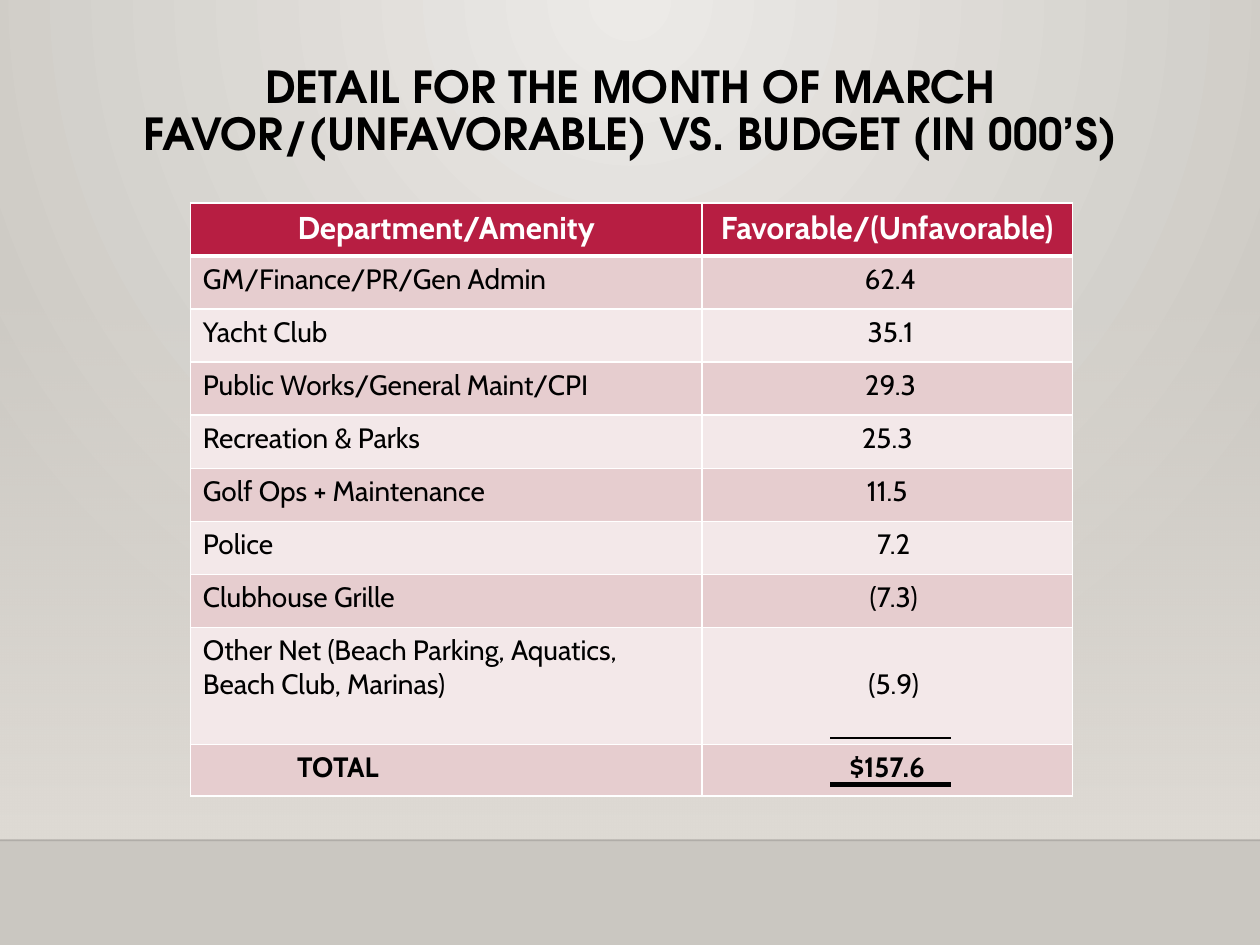
from dataclasses import dataclass

from lxml.etree import SubElement
from pptx import Presentation
from pptx.dml.color import RGBColor
from pptx.enum.shapes import MSO_CONNECTOR, MSO_SHAPE
from pptx.enum.text import MSO_ANCHOR, MSO_AUTO_SIZE, PP_ALIGN
from pptx.oxml.ns import qn
from pptx.slide import Slide
from pptx.table import _Cell
from pptx.util import Cm, Pt

BLACK = RGBColor(0x00, 0x00, 0x00)
WHITE = RGBColor(0xFF, 0xFF, 0xFF)
CRIMSON = RGBColor(0xB7, 0x1E, 0x42)
ROSE = RGBColor(0xE6, 0xCD, 0xCF)
PALE_ROSE = RGBColor(0xF3, 0xE8, 0xE9)
LIGHT_STONE = RGBColor(0xEC, 0xEA, 0xE7)
DARK_STONE = RGBColor(0xCA, 0xC7, 0xC1)
SAND = RGBColor(0xDF, 0xDB, 0xD5)

TITLE_FONT = "TeX Gyre Adventor"
TABLE_FONT = "Cabin"
CELL_MARGIN = 0.25
SLIDE_WIDTH = 25.4
FLOOR_TOP = 16.94


@dataclass(frozen=True)
class BudgetRow:
    department: str
    variance: str
    height: float = 1.07
    department_indent: float = 0
    variance_indent: float = 0
    variance_drop: float = 0
    bold: bool = False


@dataclass(frozen=True)
class Rule:
    left: float
    right: float
    top: float
    weight: float
    opacity: int = 100


ROWS = (
    BudgetRow("GM/Finance/PR/Gen Admin", "62.4", variance_indent=0.13),
    BudgetRow("Yacht Club", "35.1", variance_indent=0.13),
    BudgetRow("Public Works/General Maint/CPI", "29.3", variance_indent=0.13),
    BudgetRow("Recreation & Parks", "25.3"),
    BudgetRow("Golf Ops + Maintenance", "11.5"),
    BudgetRow("Police", "7.2", variance_indent=0.26),
    BudgetRow("Clubhouse Grille", "(7.3)", variance_indent=0.26),
    BudgetRow("Other Net (Beach Parking, Aquatics, Beach Club, Marinas)", "(5.9)",
              height=2.36, variance_indent=0.26, variance_drop=0.68),
    BudgetRow("TOTAL", "$157.6", height=1.04, department_indent=1.9, bold=True),
)
HEADER = BudgetRow("Department/Amenity", "Favorable/(Unfavorable)", bold=True)
FLOOR_EDGE = Rule(0, SLIDE_WIDTH, FLOOR_TOP, 1, opacity=20)
TOTAL_RULES = (Rule(16.74, 19.18, 15.82, 3), Rule(16.74, 19.18, 14.88, 1.25))


def set_opacity(color_element, percent: int) -> None:
    SubElement(color_element, qn("a:alpha")).set("val", str(percent * 1000))


def paint_background(slide: Slide) -> None:
    fill = slide.background.fill
    fill.gradient()
    for stop, color in zip(fill.gradient_stops, (LIGHT_STONE, DARK_STONE)):
        stop.color.rgb = color
    gradient = slide.element.xpath(".//p:bgPr/a:gradFill")[0]
    gradient.remove(gradient.find(qn("a:lin")))
    circle = SubElement(gradient, qn("a:path"), path="circle")
    SubElement(circle, qn("a:fillToRect"), l="43000", t="0", r="43000", b="100000")


def add_wall_shade(slide: Slide) -> None:
    top = 5.59
    shade = slide.shapes.add_shape(
        MSO_SHAPE.RECTANGLE, 0, Cm(top), Cm(SLIDE_WIDTH), Cm(FLOOR_TOP - top))
    shade.shadow.inherit = False
    shade.line.fill.background()
    shade.fill.gradient()
    shade.fill.gradient_angle = 270
    for stop in shade.fill.gradient_stops:
        stop.color.rgb = SAND
    set_opacity(shade.element.xpath(".//a:gs/a:srgbClr")[0], 0)


def add_rule(slide: Slide, rule: Rule) -> None:
    connector = slide.shapes.add_connector(
        MSO_CONNECTOR.STRAIGHT, Cm(rule.left), Cm(rule.top), Cm(rule.right), Cm(rule.top))
    connector.line.color.rgb = BLACK
    connector.line.width = Pt(rule.weight)
    if rule.opacity < 100:
        set_opacity(connector.element.xpath(".//a:ln//a:srgbClr")[0], rule.opacity)
    SubElement(connector.element.spPr, qn("a:effectLst"))


def set_title(slide: Slide) -> None:
    title = slide.shapes.title
    title.left, title.top, title.width, title.height = Cm(2.29), Cm(0.23), Cm(20.83), Cm(3.4)
    frame = title.text_frame
    frame.word_wrap = True
    frame.auto_size = MSO_AUTO_SIZE.NONE
    frame.vertical_anchor = MSO_ANCHOR.BOTTOM
    frame.margin_bottom = Cm(0.4)
    frame.text = "DETAIL FOR THE MONTH OF MARCH\vFAVOR/(UNFAVORABLE) VS. BUDGET (IN 000’S)"
    paragraph = frame.paragraphs[0]
    paragraph.alignment = PP_ALIGN.CENTER
    paragraph.line_spacing = 0.9
    paragraph.font.name = TITLE_FONT
    paragraph.font.size = Pt(25.2)
    paragraph.font.bold = True
    paragraph.font.color.rgb = BLACK


def add_borders(cell: _Cell, top: float, bottom: float) -> None:
    properties = cell._tc.get_or_add_tcPr()
    for side, weight in (("L", 1), ("R", 1), ("T", top), ("B", bottom)):
        line = SubElement(properties, qn(f"a:ln{side}"), w=str(Pt(weight)))
        solid = SubElement(line, qn("a:solidFill"))
        SubElement(solid, qn("a:srgbClr"), val=str(WHITE))


def write_cell(cell: _Cell, text: str, alignment: PP_ALIGN, indent: float, drop: float,
               size: int, color: RGBColor, bold: bool) -> None:
    cell.margin_left = Cm(CELL_MARGIN + indent)
    cell.margin_right = Cm(CELL_MARGIN)
    cell.margin_top = Cm(0.13 + drop)
    cell.text = text
    paragraph = cell.text_frame.paragraphs[0]
    paragraph.alignment = alignment
    paragraph.font.name = TABLE_FONT
    paragraph.font.size = Pt(size)
    paragraph.font.bold = bold
    paragraph.font.color.rgb = color


def add_budget_table(slide: Slide) -> None:
    rows = (HEADER, *ROWS)
    widths = (10.31, 7.47)
    table = slide.shapes.add_table(
        len(rows), len(widths), Cm(3.84), Cm(4.09), Cm(sum(widths)),
        Cm(sum(row.height for row in rows))).table
    for column, width in zip(table.columns, widths):
        column.width = Cm(width)
    for index, row in enumerate(rows):
        table.rows[index].height = Cm(row.height)
        is_header = index == 0
        size, color = (18, WHITE) if is_header else (16, BLACK)
        fill = CRIMSON if is_header else (PALE_ROSE, ROSE)[index % 2]
        department, variance = table.cell(index, 0), table.cell(index, 1)
        for cell in (department, variance):
            add_borders(cell, top=3 if index == 1 else 1, bottom=3 if is_header else 1)
            cell.fill.solid()
            cell.fill.fore_color.rgb = fill
        write_cell(department, row.department, PP_ALIGN.CENTER if is_header else PP_ALIGN.LEFT,
                   row.department_indent, 0, size, color, row.bold)
        write_cell(variance, row.variance, PP_ALIGN.CENTER, row.variance_indent,
                   row.variance_drop, size, color, row.bold)


def main() -> None:
    presentation = Presentation()
    presentation.slide_width = Cm(SLIDE_WIDTH)
    presentation.slide_height = Cm(19.05)
    slide = presentation.slides.add_slide(presentation.slide_layouts[5])
    paint_background(slide)
    add_wall_shade(slide)
    add_rule(slide, FLOOR_EDGE)
    set_title(slide)
    add_budget_table(slide)
    for rule in TOTAL_RULES:
        add_rule(slide, rule)
    presentation.save("out.pptx")


if __name__ == "__main__":
    main()
